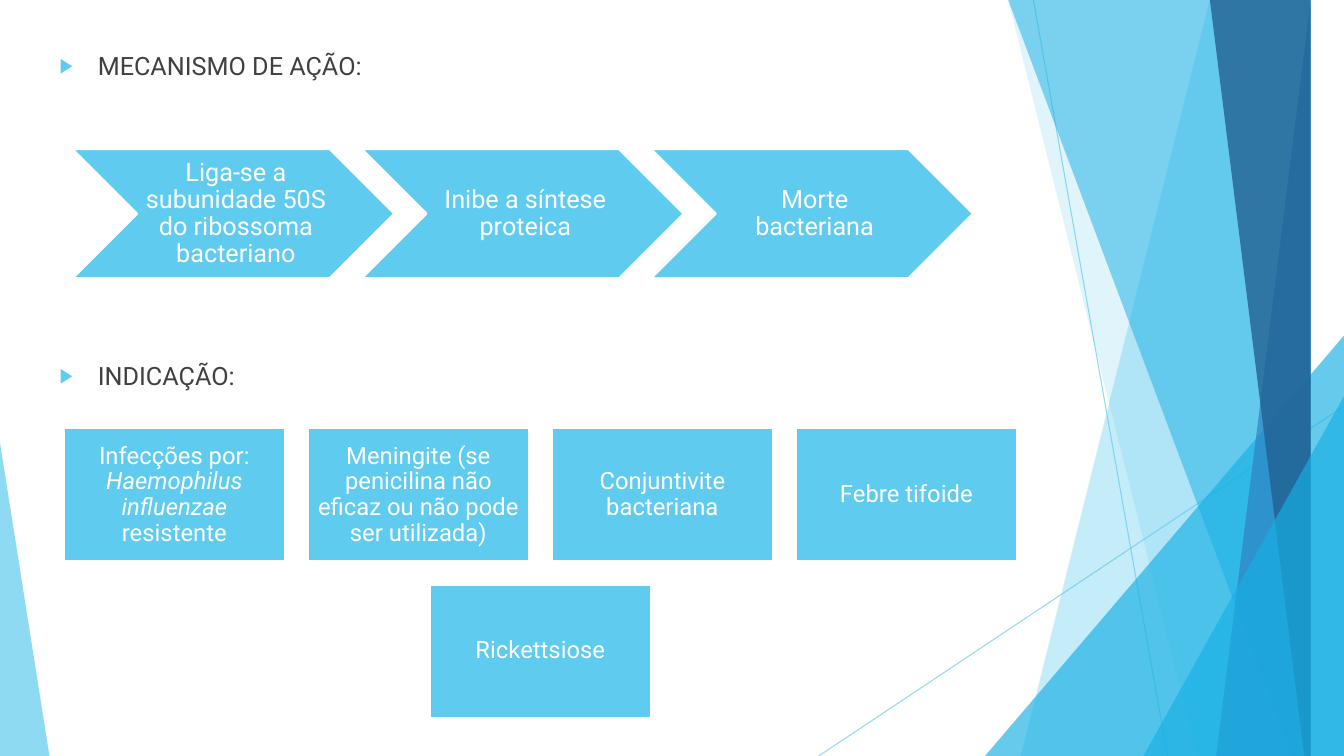
from dataclasses import dataclass

from lxml.etree import SubElement
from pptx import Presentation
from pptx.dml.color import RGBColor
from pptx.enum.shapes import MSO_CONNECTOR, MSO_SHAPE
from pptx.enum.text import MSO_ANCHOR, MSO_AUTO_SIZE, PP_ALIGN
from pptx.oxml.ns import qn
from pptx.util import Inches, Pt


@dataclass(frozen=True)
class Theme:
    font: str = "Roboto"
    sky: str = "5FCBEF"
    cyan: str = "17B0E4"
    blue: str = "2E83C3"
    navy: str = "226292"
    white: str = "FFFFFF"
    text: str = "404040"
    heading_size: int = 18
    step_size: int = 18
    card_size: int = 17


theme = Theme()
WIDTH, HEIGHT = 13.33, 7.5


def paint(fill, color, opacity=100):
    fill.solid()
    fill.fore_color.rgb = RGBColor.from_string(color)
    if opacity < 100:
        clr = fill._xPr.find(qn("a:solidFill"))[0]
        SubElement(clr, qn("a:alpha"), val=str(opacity * 1000))


def add_block(shape_type, left, top, width, height, margins, size, runs):
    sp = s.shapes.add_shape(shape_type, Inches(left), Inches(top), Inches(width), Inches(height))
    sp.shadow.inherit = False
    paint(sp.fill, theme.sky)
    paint(sp.line.fill, theme.white)
    sp.line.width = Pt(1.5)
    tf = sp.text_frame
    tf.word_wrap = True
    tf.vertical_anchor = MSO_ANCHOR.MIDDLE
    tf.margin_left, tf.margin_top, tf.margin_right, tf.margin_bottom = map(Inches, margins)
    p = tf.paragraphs[0]
    p.alignment = PP_ALIGN.CENTER
    p.line_spacing = 0.9
    for text, italic in runs:
        r = p.add_run()
        r.text = text
        r.font.name = theme.font
        r.font.size = Pt(size)
        r.font.italic = italic
        r.font.color.rgb = RGBColor.from_string(theme.white)


prs = Presentation()
prs.slide_width, prs.slide_height = Inches(WIDTH), Inches(HEIGHT)
s = prs.slides.add_slide(prs.slide_layouts[1])
title = s.shapes.title
title.element.getparent().remove(title.element)

# Thin background lines
for x1, y1, x2, y2 in [(10.25, 0, 11.58, HEIGHT), (WIDTH, 4.03, 8.12, HEIGHT)]:
    line = s.shapes.add_connector(MSO_CONNECTOR.STRAIGHT, Inches(x1), Inches(y1), Inches(x2), Inches(y2))
    line.line.width = Pt(0.75)
    paint(line.line.fill, theme.sky, 70)
    SubElement(line.element.spPr, qn("a:effectLst"))

# Background facets: (top x, bottom x) reaching the right edge,
# or a triangle as (left, top, width, apex) reaching the bottom edge
facets = [
    ((12.28, 10.04), theme.sky, 36),
    ((10.5, 11.83), theme.sky, 20),
    ((9.77, 3.33, 3.56, 1), theme.cyan, 66),
    ((10.21, 12.91), theme.cyan, 50),
    ((13.03, 11.92), theme.blue, 70),
    ((11.96, 13.18), theme.navy, 80),
    ((11.34, 3.93, 1.99, 1), theme.cyan, 66),
    ((0, 4.39, 0.49, 0), theme.sky, 70),
]
for geometry, color, opacity in facets:
    if len(geometry) == 2:
        top_x, bottom_x = geometry
        outline = s.shapes.build_freeform(top_x, 0, scale=Inches(1))
        outline.add_line_segments([(WIDTH, 0), (WIDTH, HEIGHT), (bottom_x, HEIGHT)], close=True)
        sp = outline.convert_to_shape()
    else:
        left, top, width, apex = geometry
        sp = s.shapes.add_shape(MSO_SHAPE.ISOSCELES_TRIANGLE, Inches(left), Inches(top),
                                Inches(width), Inches(HEIGHT - top))
        sp.adjustments[0] = apex
    sp.shadow.inherit = False
    paint(sp.fill, color, opacity)
    sp.line.fill.background()

# Bulleted headings
body = s.placeholders[1]
body.left, body.top, body.width, body.height = map(Inches, (0.49, 0.45, 9.4, 4.24))
tf = body.text_frame
tf.word_wrap = True
tf.auto_size = MSO_AUTO_SIZE.NONE
tf.vertical_anchor = MSO_ANCHOR.TOP
for i, (text, gap) in enumerate([("MECANISMO DE AÇÃO:", 10), ("INDICAÇÃO:", 200)]):
    p = tf.add_paragraph() if i else tf.paragraphs[0]
    p.space_before = Pt(gap)
    pPr = p._p.get_or_add_pPr()
    pPr.set("marL", str(Inches(0.38)))
    pPr.set("indent", str(Inches(-0.38)))
    SubElement(SubElement(pPr, qn("a:buClr")), qn("a:srgbClr"), val=theme.sky)
    SubElement(pPr, qn("a:buSzPct"), val="80000")
    SubElement(pPr, qn("a:buFont"), typeface="Arial")
    SubElement(pPr, qn("a:buChar"), char="▶")
    r = p.add_run()
    r.text = text
    r.font.name = theme.font
    r.font.size = Pt(theme.heading_size)
    r.font.color.rgb = RGBColor.from_string(theme.text)

# Mechanism of action: chevron chain
steps = [
    "Liga-se a subunidade 50S do ribossoma bacteriano",
    "Inibe a síntese proteica",
    "Morte bacteriana",
]
for i, step in enumerate(steps):
    add_block(MSO_SHAPE.CHEVRON, 0.72 + 2.87 * i, 1.48, 3.19, 1.28,
              (0.08, 0.03, 0.03, 0.03), theme.step_size, [(step, False)])

# Indications: four cards, with the fifth centred below
cards = [
    [("Infecções por: ", False), ("Haemophilus influenzae", True), (" resistente", False)],
    [("Meningite (se penicilina não eficaz ou não pode ser utilizada)", False)],
    [("Conjuntivite bacteriana", False)],
    [("Febre tifoide", False)],
    [("Rickettsiose", False)],
]
for i, runs in enumerate(cards):
    row, column = (0, i) if i < 4 else (1, 1.5)
    add_block(MSO_SHAPE.RECTANGLE, 0.63 + 2.42 * column, 4.25 + 1.55 * row, 2.2, 1.32,
              (0.07, 0.07, 0.07, 0.07), theme.card_size, runs)

prs.save("out.pptx")
